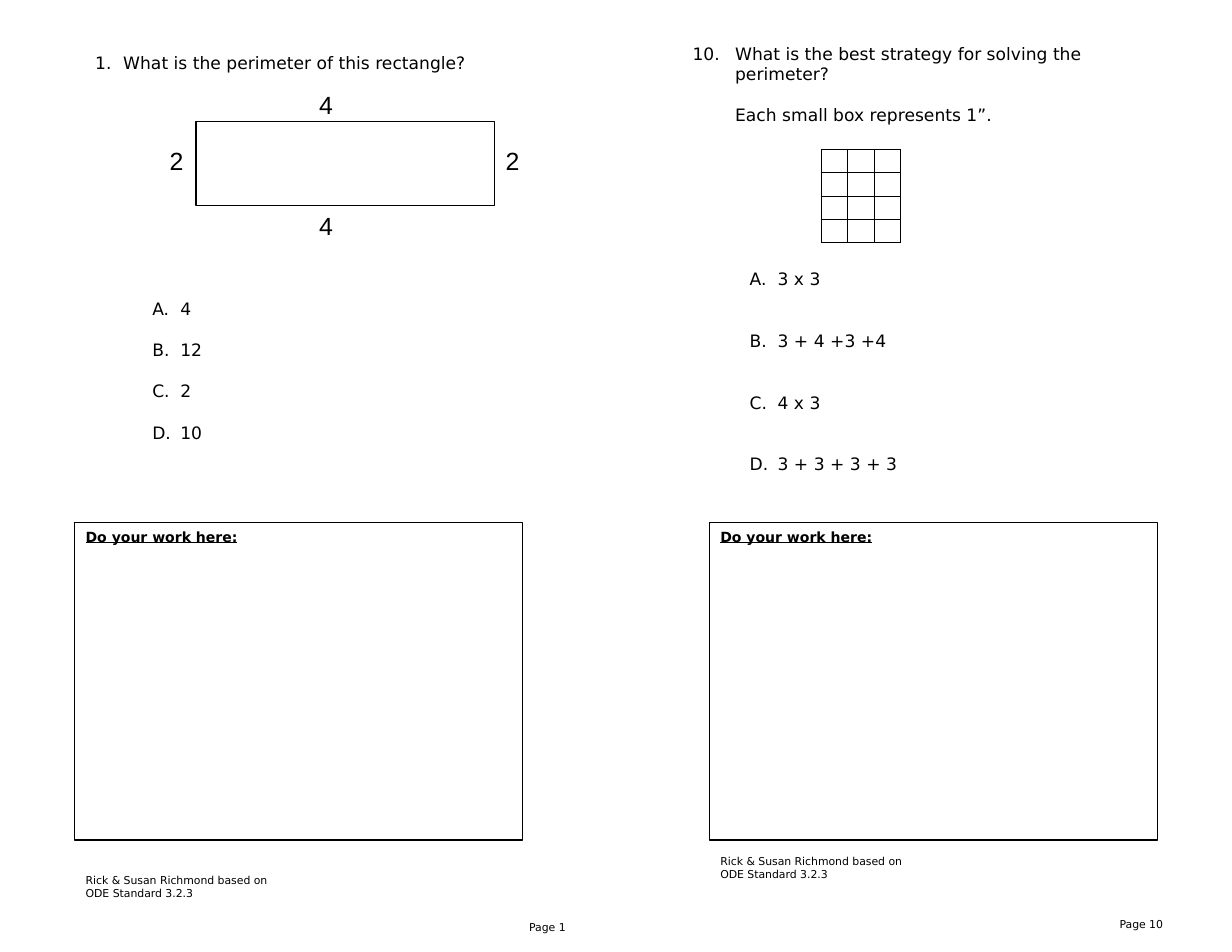
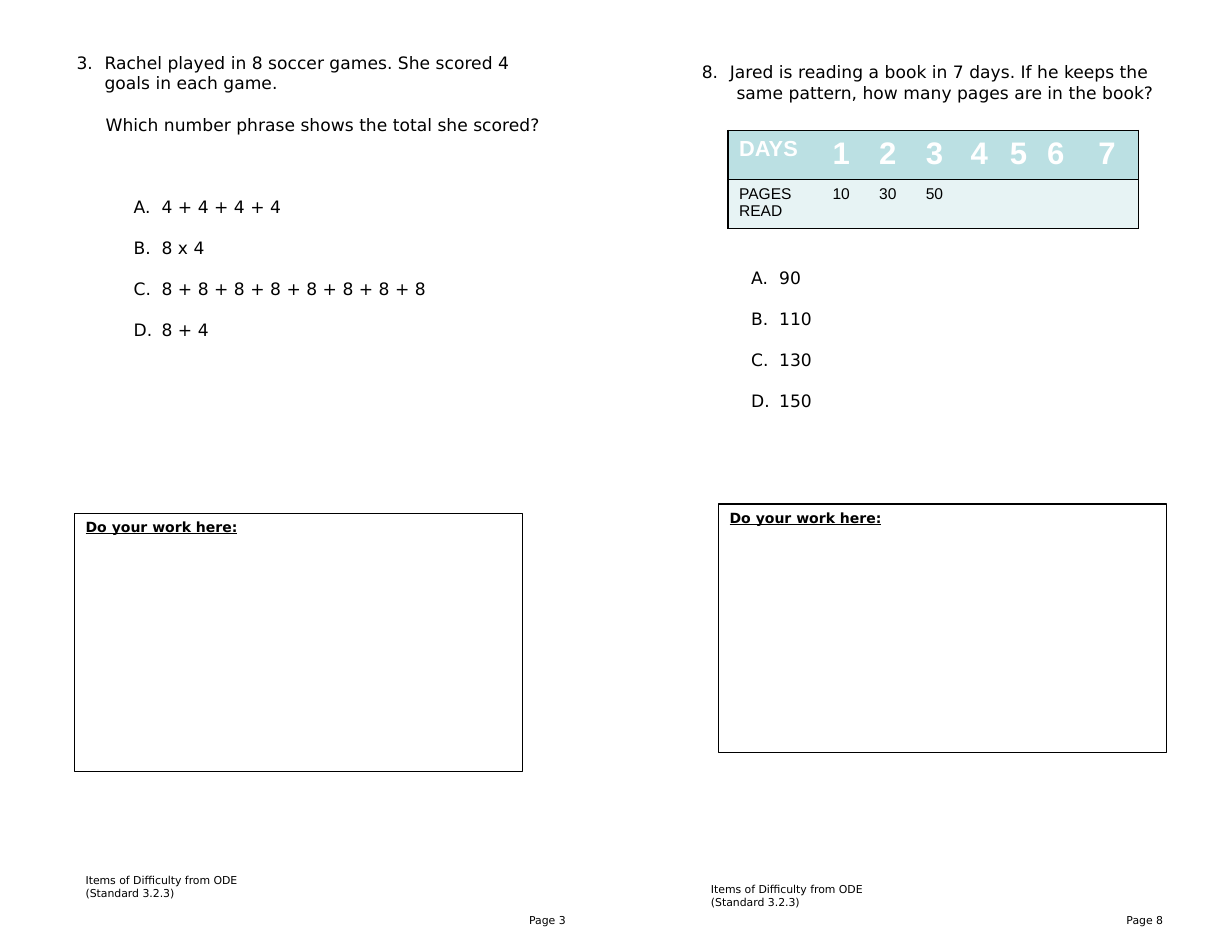
from dataclasses import dataclass
from typing import Any, Callable, NamedTuple, Optional

from lxml.etree import SubElement
from pptx import Presentation
from pptx.dml.color import RGBColor
from pptx.enum.shapes import MSO_SHAPE
from pptx.enum.text import MSO_ANCHOR, MSO_AUTO_SIZE, PP_ALIGN
from pptx.oxml.ns import qn
from pptx.oxml.xmlchemy import OxmlElement
from pptx.util import Emu, Inches, Pt

COLUMNS, ROWS = 132, 102  # twelve grid cells to the inch
CELL = Inches(1) // 12
LINE_ROWS = 2.2  # height of one line of question text
LINE_POINTS = 13.2
BLACK, WHITE, HEADER_FILL, BODY_FILL = "000000", "FFFFFF", "BBE0E3", "E7F3F4"
BODY_FONT, FIGURE_FONT = "DejaVu Sans", "Arial"
TEXT = {"name": BODY_FONT, "size": Pt(11), "bold": False}
SMALL = TEXT | {"size": Pt(7)}
HEADING = {"name": BODY_FONT, "size": Pt(9), "bold": True, "underline": True}
FIGURE_LABEL = {"name": FIGURE_FONT, "size": Pt(16)}


class Box(NamedTuple):
    """A place in grid cells."""
    left: float
    top: float
    width: float
    height: float


class Continuation(NamedTuple):
    text: str
    indent: float
    gap: float = 0


class Style(NamedTuple):
    font: dict[str, Any]
    color: str


@dataclass
class Page:
    number: int
    question: str
    place: Box
    lines_to_answers: int
    answers: list[str]
    work: Box
    credit: str
    credit_left: float
    credit_top: float
    footer: Box
    hanging: float = 0.25
    answer_indent: float = 0.76
    answer_gap: float = LINE_POINTS
    continuation: Optional[Continuation] = None
    figure: Optional[Callable[[Any], None]] = None


def rgb(value: str) -> RGBColor:
    return RGBColor.from_string(value)


def cells(count: float) -> Emu:
    return Emu(round(count * CELL))


def set_values(target: Any, values: dict[str, Any]) -> None:
    for name, value in values.items():
        setattr(target, name, value)


def place(shape: Any, box: Box) -> None:
    set_values(shape, {name: cells(value) for name, value in box._asdict().items()})


def write(paragraph: Any, text: str, font: dict[str, Any], color: str = BLACK) -> None:
    run = paragraph.add_run()
    run.text = text
    set_values(run.font, font)
    run.font.color.rgb = rgb(color)


def indent(paragraph: Any, left: float, hanging: float = 0,
           numbering: str = "", start: int = 1) -> None:
    """Set the indent in inches, with automatic numbering if a scheme is named."""
    properties = paragraph._p.get_or_add_pPr()
    properties.set("marL", str(Inches(left)))
    properties.set("indent", str(-Inches(hanging)))
    if numbering:
        bullet = SubElement(properties, qn("a:buAutoNum"), type=numbering)
        if start > 1:
            bullet.set("startAt", str(start))
    else:
        SubElement(properties, qn("a:buNone"))


def open_frame(shape: Any, box: Box) -> Any:
    place(shape, box)
    set_values(shape.text_frame, {"word_wrap": True, "auto_size": MSO_AUTO_SIZE.NONE,
                                  "vertical_anchor": MSO_ANCHOR.TOP})
    return shape.text_frame


def format_paragraph(paragraph: Any, gap: float = 0) -> None:
    set_values(paragraph, {"alignment": PP_ALIGN.LEFT, "line_spacing": 1.0,
                           "space_before": Pt(0), "space_after": Pt(gap)})


def add_label(slide: Any, box: Box, text: str, font: dict[str, Any],
              alignment: Any = PP_ALIGN.LEFT) -> None:
    frame = open_frame(slide.shapes.add_textbox(0, 0, 0, 0), box)
    frame.paragraphs[0].alignment = alignment
    write(frame.paragraphs[0], text, font)


def add_outline(slide: Any, box: Box, fill: str = "") -> Any:
    shape = slide.shapes.add_shape(MSO_SHAPE.RECTANGLE, 0, 0, 0, 0)
    place(shape, box)
    shape.shadow.inherit = False
    shape.line.color.rgb = rgb(BLACK)
    shape.line.width = Pt(0.75)
    if fill:
        shape.fill.solid()
        shape.fill.fore_color.rgb = rgb(fill)
    else:
        shape.fill.background()
    return shape


def set_borders(cell: Any, shown: str, width: float) -> None:
    """Draw the named edges, out of L, R, T and B, and clear the others."""
    properties = cell._tc.get_or_add_tcPr()
    for position, edge in enumerate("LRTB"):
        line = OxmlElement(f"a:ln{edge}")
        if edge in shown:
            line.set("w", str(Pt(width)))
            fill = SubElement(line, qn("a:solidFill"))
            SubElement(fill, qn("a:srgbClr"), val=BLACK)
        else:
            SubElement(line, qn("a:noFill"))
        properties.insert(position, line)


def add_plain_table(slide: Any, left: float, top: float, widths: list[float],
                    heights: list[float]) -> Any:
    frame = slide.shapes.add_table(len(heights), len(widths), cells(left), cells(top),
                                   cells(sum(widths)), cells(sum(heights)))
    table = frame.table
    set_values(table, {"first_row": False, "horz_banding": False})
    for column, width in zip(table.columns, widths):
        column.width = cells(width)
    for row, height in zip(table.rows, heights):
        row.height = cells(height)
    return table


def draw_rectangle(slide: Any) -> None:
    add_outline(slide, Box(21, 13, 32, 9), WHITE)
    for text, left, top in [("2", 53, 15), ("2", 17, 15), ("4", 33, 22), ("4", 33, 9)]:
        add_label(slide, Box(left, top, 4, 4.4), text, FIGURE_LABEL)


def draw_small_boxes(slide: Any) -> None:
    table = add_plain_table(slide, 88, 16, [8.5 / 3] * 3, [2.5] * 4)
    for cell in table.iter_cells():
        set_values(cell, {f"margin_{side}": 0 for side in ("left", "right", "top", "bottom")})
        cell.fill.background()
        set_borders(cell, "LRTB", 0.5)
        SubElement(cell.text_frame.paragraphs[0]._p, qn("a:endParaRPr"), sz="800")


def draw_reading_table(slide: Any) -> None:
    rows = [["DAYS", *"1234567"], ["PAGES\nREAD", "10", "30", "50", "", "", "", ""]]
    fills = [HEADER_FILL, BODY_FILL]
    title, day, entry = (
        Style({"name": FIGURE_FONT, "size": Pt(size), "bold": bold}, color)
        for size, bold, color in [(14, True, WHITE), (20, True, WHITE), (10, False, BLACK)])
    table = add_plain_table(slide, 78, 14, [10, 5, 5, 4.8, 4.2, 4, 5.5, 5.5], [5.25] * 2)
    for row, texts in enumerate(rows):
        for column, text in enumerate(texts):
            cell = table.cell(row, column)
            cell.fill.solid()
            cell.fill.fore_color.rgb = rgb(fills[row])
            sides = {0: "L", len(texts) - 1: "R"}.get(column, "")
            set_borders(cell, "TB" + sides, 1)
            style = entry if row else day if column else title
            for number, line in enumerate(text.split("\n")):
                frame = cell.text_frame
                paragraph = frame.add_paragraph() if number else frame.paragraphs[0]
                write(paragraph, line, style.font, style.color)


def add_question(shape: Any, page: Page) -> None:
    height = page.lines_to_answers * LINE_ROWS
    frame = open_frame(shape, page.place._replace(height=height))
    following = page.continuation
    paragraph = frame.paragraphs[0]
    format_paragraph(paragraph, following.gap if following else 0)
    indent(paragraph, page.hanging, page.hanging, "arabicPeriod", page.number)
    write(paragraph, page.question, TEXT)
    if following:
        paragraph = frame.add_paragraph()
        format_paragraph(paragraph)
        indent(paragraph, following.indent)
        write(paragraph, following.text, TEXT)


def add_answers(shape: Any, page: Page) -> None:
    offset = page.lines_to_answers * LINE_ROWS
    height = len(page.answers) * (LINE_POINTS + page.answer_gap) / 6
    frame = open_frame(shape, page.place._replace(top=page.place.top + offset, height=height))
    for number, answer in enumerate(page.answers):
        paragraph = frame.add_paragraph() if number else frame.paragraphs[0]
        format_paragraph(paragraph, page.answer_gap)
        indent(paragraph, page.answer_indent, 0.25, "alphaUcPeriod")
        write(paragraph, answer, TEXT)


def add_page(slide: Any, page: Page, question: Any, answers: Any) -> None:
    add_question(question, page)
    add_answers(answers, page)
    if page.figure:
        page.figure(slide)
    frame = open_frame(add_outline(slide, page.work), page.work)
    format_paragraph(frame.paragraphs[0])
    write(frame.paragraphs[0], "Do your work here:", HEADING)
    add_label(slide, Box(page.credit_left, page.credit_top, 23, 4), page.credit, SMALL)
    add_label(slide, page.footer, f"Page {page.number}", SMALL, PP_ALIGN.RIGHT)


AUTHORS = "Rick & Susan Richmond based on ODE Standard 3.2.3"
ITEMS = "Items of Difficulty from ODE (Standard 3.2.3)"
SHEETS = [
    (Page(1, "What is the perimeter of this rectangle?", Box(9, 5, 49, 0), 12,
          ["4", "12", "2", "10"], Box(8, 56, 48, 34), AUTHORS, 8, 93,
          Box(52, 98, 9.8, 3.6), figure=draw_rectangle),
     Page(10, "What is the best strategy for solving the perimeter?", Box(73, 4, 52, 0), 11,
          ["3 x 3", "3 + 4 +3 +4", "4 x 3", "3 + 3 + 3 + 3"], Box(76, 56, 48, 34),
          AUTHORS, 76, 91, Box(116, 97.7, 9.8, 3.6), hanging=0.38,
          answer_gap=2 * LINE_POINTS, figure=draw_small_boxes,
          continuation=Continuation("Each small box represents 1”.", 0.38, LINE_POINTS))),
    (Page(3, "Rachel played in 8 soccer games. She scored 4 goals in each game.",
          Box(7, 5, 54, 0), 7,
          ["4 + 4 + 4 + 4", "8 x 4", "8 + 8 + 8 + 8 + 8 + 8 + 8 + 8", "8 + 4"],
          Box(8, 55, 48, 27.7), ITEMS, 8, 93, Box(52, 97.3, 9.8, 3.6),
          continuation=Continuation("Which number phrase shows the total she scored?",
                                    0.26, LINE_POINTS)),
     Page(8, "Jared is reading a book in 7 days. If he keeps the", Box(74, 6, 52, 0), 10,
          ["90", "110", "130", "150"], Box(77, 54, 48, 26.6), ITEMS, 75, 94,
          Box(116, 97.3, 9.8, 3.6), answer_indent=0.69, figure=draw_reading_table,
          continuation=Continuation("same pattern, how many pages are in the book?", 0.31))),
]


def main() -> None:
    presentation = Presentation()
    presentation.slide_width, presentation.slide_height = cells(COLUMNS), cells(ROWS)
    comparison = presentation.slide_layouts.get_by_name("Comparison")
    for left_page, right_page in SHEETS:
        slide = presentation.slides.add_slide(comparison)
        holders = {holder.placeholder_format.idx: holder for holder in slide.placeholders}
        add_page(slide, left_page, holders[0], holders[2])
        add_page(slide, right_page, holders[3], holders[4])
        unused = holders[1].element
        unused.getparent().remove(unused)
    presentation.save("out.pptx")


if __name__ == "__main__":
    main()
